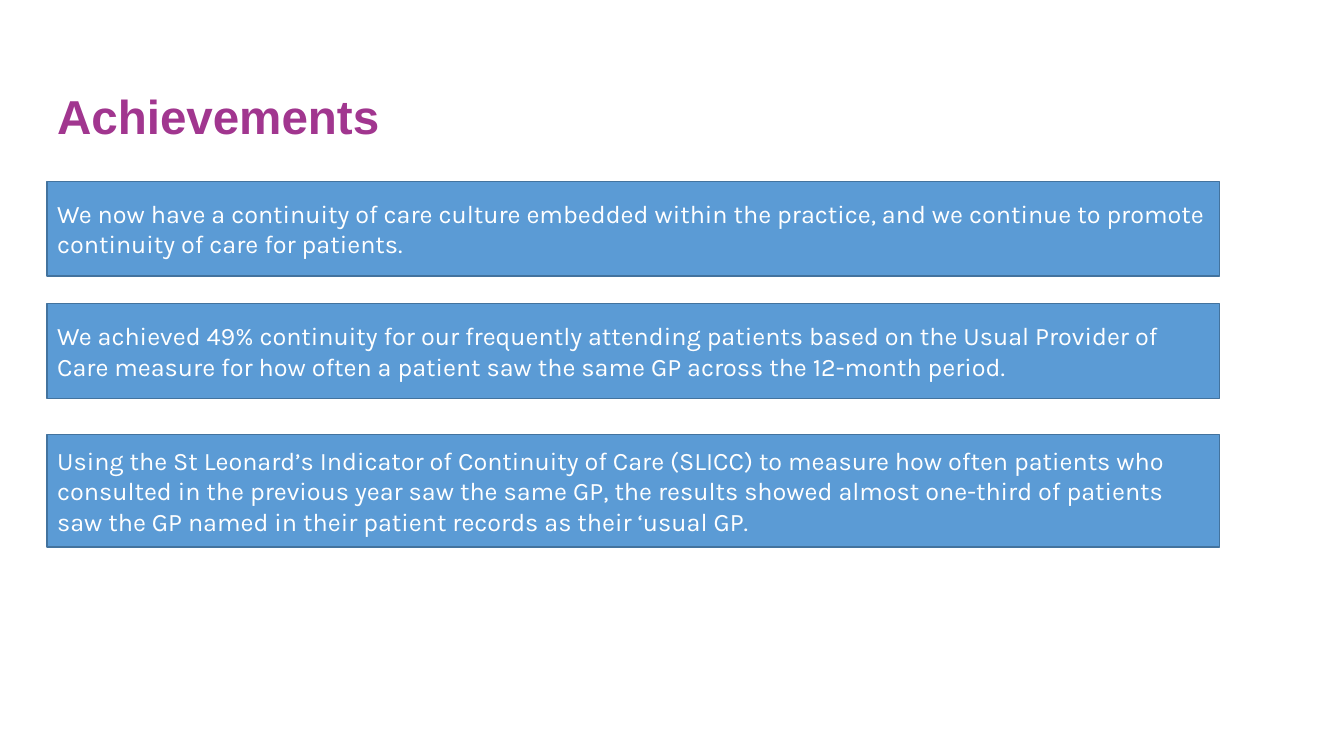
"""Build the Achievements slide with its three statement panels."""
from dataclasses import dataclass

import pptx
import pptx.dml.color
import pptx.enum.shapes
import pptx.enum.text
import pptx.shapes.autoshape
import pptx.slide
import pptx.util

Cm = pptx.util.Cm
Pt = pptx.util.Pt
RGBColor = pptx.dml.color.RGBColor


@dataclass(frozen=True)
class Theme:
    title_color: RGBColor = RGBColor.from_string("A1368F")
    panel_fill: RGBColor = RGBColor.from_string("5B9BD5")
    panel_line: RGBColor = RGBColor.from_string("43739E")
    panel_text: RGBColor = RGBColor.from_string("FFFFFF")
    title_font: str = "Arial"
    panel_font: str = "Karla"
    title_size: Pt = Pt(34)
    panel_size: Pt = Pt(18)
    line_width: Pt = Pt(1)


@dataclass(frozen=True)
class Panel:
    top: Cm
    height: Cm
    text: str


THEME = Theme()
LEFT = Cm(1.19)
PANEL_WIDTH = Cm(29.54)
PANELS = (
    Panel(
        Cm(4.57),
        Cm(2.39),
        "We now have a continuity of care culture embedded within the practice, "
        "and we continue to promote continuity of care for patients.",
    ),
    Panel(
        Cm(7.65),
        Cm(2.39),
        "We achieved 49% continuity for our frequently attending patients based on "
        "the Usual Provider of Care measure for how often a patient saw the same GP "
        "across the 12-month period.",
    ),
    Panel(
        Cm(10.95),
        Cm(2.84),
        "Using the St Leonard’s Indicator of Continuity of Care (SLICC) to measure "
        "how often patients who consulted in the previous year saw the same GP, the "
        "results showed almost one-third of patients saw the GP named in their "
        "patient records as their ‘usual GP.",
    ),
)


def write_text(
    box: pptx.shapes.autoshape.Shape,
    text: str,
    font: str,
    size: Pt,
    color: RGBColor,
    bold: bool = False,
) -> None:
    frame = box.text_frame
    frame.word_wrap = True
    frame.vertical_anchor = pptx.enum.text.MSO_ANCHOR.MIDDLE
    frame.text = text
    para = frame.paragraphs[0]
    para.alignment = pptx.enum.text.PP_ALIGN.LEFT
    for span in para.runs:
        span.font.name = font
        span.font.size = size
        span.font.bold = bold
        span.font.color.rgb = color


def add_title(page: pptx.slide.Slide, text: str) -> None:
    box = page.shapes.add_textbox(LEFT, Cm(1.17), Cm(31.29), Cm(3.68))
    write_text(
        box, text, THEME.title_font, THEME.title_size, THEME.title_color, bold=True
    )
    box.text_frame.paragraphs[0].line_spacing = 0.9


def add_panel(page: pptx.slide.Slide, panel: Panel) -> None:
    box = page.shapes.add_shape(
        pptx.enum.shapes.MSO_SHAPE.RECTANGLE,
        LEFT,
        panel.top,
        PANEL_WIDTH,
        panel.height,
    )
    box.shadow.inherit = False
    box.fill.solid()
    box.fill.fore_color.rgb = THEME.panel_fill
    box.line.color.rgb = THEME.panel_line
    box.line.width = THEME.line_width
    write_text(
        box, panel.text, THEME.panel_font, THEME.panel_size, THEME.panel_text
    )


def main() -> None:
    deck = pptx.Presentation()
    deck.slide_width = Cm(33.87)
    deck.slide_height = Cm(19.05)
    page = deck.slides.add_slide(deck.slide_layouts[6])
    add_title(page, "Achievements")
    for panel in PANELS:
        add_panel(page, panel)
    deck.save("out.pptx")


if __name__ == "__main__":
    main()
